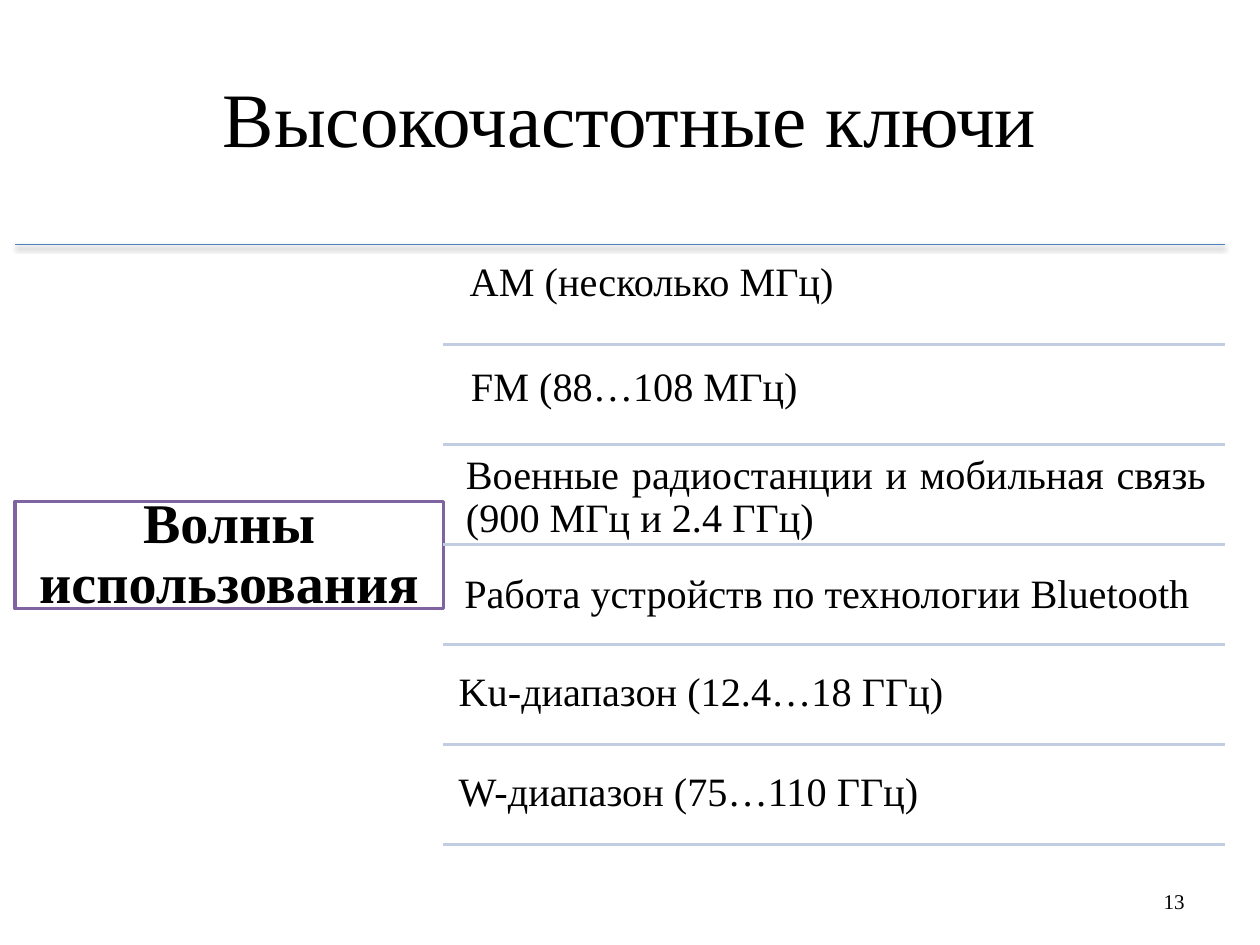
from lxml import etree
from pptx import Presentation
from pptx.dml.color import RGBColor
from pptx.enum.shapes import MSO_CONNECTOR, MSO_SHAPE
from pptx.enum.text import MSO_ANCHOR, PP_ALIGN
from pptx.oxml.ns import qn
from pptx.util import Pt

STRAIGHT = MSO_CONNECTOR.STRAIGHT
RECT = MSO_SHAPE.RECTANGLE
TOP, MIDDLE = MSO_ANCHOR.TOP, MSO_ANCHOR.MIDDLE
CENTER, RIGHT, JUSTIFY = PP_ALIGN.CENTER, PP_ALIGN.RIGHT, PP_ALIGN.JUSTIFY
RULE_LEFT, RULE_RIGHT = 253.4, 699.8


def write(sp, text, size, align, anchor, insets=(7.2, 3.6), spacing=1, bold=False):
    """Fill a shape with one paragraph; insets are (sides, top and bottom)."""
    tf = sp.text_frame
    tf.word_wrap = True
    tf.vertical_anchor = anchor
    tf.margin_left = tf.margin_right = Pt(insets[0])
    tf.margin_top = tf.margin_bottom = Pt(insets[1])
    p = tf.paragraphs[0]
    p.alignment = align
    p.line_spacing = spacing
    r = p.add_run()
    r.text = text
    r.font.name = "Times New Roman"
    r.font.size = Pt(size)
    r.font.bold = bold
    r.font.color.rgb = RGBColor.from_string("000000")


def add_rule(s, left, y, color, width):
    """Draw a horizontal line to the right edge and return its empty effect list."""
    line = s.shapes.add_connector(STRAIGHT, Pt(left), Pt(y), Pt(RULE_RIGHT), Pt(y))
    line.line.color.rgb = RGBColor.from_string(color)
    line.line.width = Pt(width)
    return etree.SubElement(line._element.spPr, qn("a:effectLst"))


prs = Presentation()
prs.slide_width, prs.slide_height = Pt(720), Pt(540)
s = prs.slides.add_slide(prs.slide_layouts[5])

title = s.shapes.title
title.left, title.top, title.width, title.height = Pt(0), Pt(21.6), Pt(720), Pt(90)
write(title, "Высокочастотные ключи", 44, CENTER, MIDDLE)

# Line under the title, with a soft shadow
effects = add_rule(s, 8.6, 139.7, "4F81BD", 0.75)
shadow = etree.SubElement(effects, qn("a:outerShdw"), blurRad=str(Pt(3.1)),
                          dist=str(Pt(1.8)), dir="5400000", rotWithShape="0")
shadow_color = etree.SubElement(shadow, qn("a:srgbClr"), val="000000")
etree.SubElement(shadow_color, qn("a:alpha"), val="35000")

# Heading box on the left
box = s.shapes.add_shape(RECT, Pt(8.6), Pt(286.6), Pt(244.8), Pt(61.2))
box.shadow.inherit = False
box.fill.solid()
box.fill.fore_color.rgb = RGBColor.from_string("FFFFFF")
box.line.color.rgb = RGBColor.from_string("8064A2")
box.line.width = Pt(2)
write(box, "Волны использования", 32, CENTER, MIDDLE, (9.4, 9.4), 0.9, True)

# Frequency bands, each with a rule below it
for i in range(6):
    add_rule(s, RULE_LEFT, 196.8 + 57.15 * i, "C2CDE1", 2)

upper = dict(anchor=TOP, insets=(7, 7), spacing=0.9)
lower = dict(anchor=MIDDLE)
bands = [
    ("AM (несколько МГц)", 261.4, 142.6, 54.7, upper),
    ("FM (88…108 МГц)", 262.1, 202.3, 54.7, upper),
    ("Военные радиостанции и мобильная связь (900 МГц и 2.4 ГГц)",
     259.2, 252.7, 54.7, upper),
    ("Работа устройств по технологии Bluetooth", 258.2, 321.1, 35.3, lower),
    ("Ku-диапазон (12.4…18 ГГц)", 255, 376.6, 35.3, lower),
    ("W-диапазон (75…110 ГГц)", 255, 434.2, 35.3, lower),
]
for text, left, top, height, style in bands:
    label = s.shapes.add_textbox(Pt(left), Pt(top), Pt(437.8), Pt(height))
    write(label, text, 23, JUSTIFY, **style)

number = s.shapes.add_textbox(Pt(516.2), Pt(500.4), Pt(167.8), Pt(28.8))
write(number, "13", 12, RIGHT, MIDDLE)

prs.save("out.pptx")
